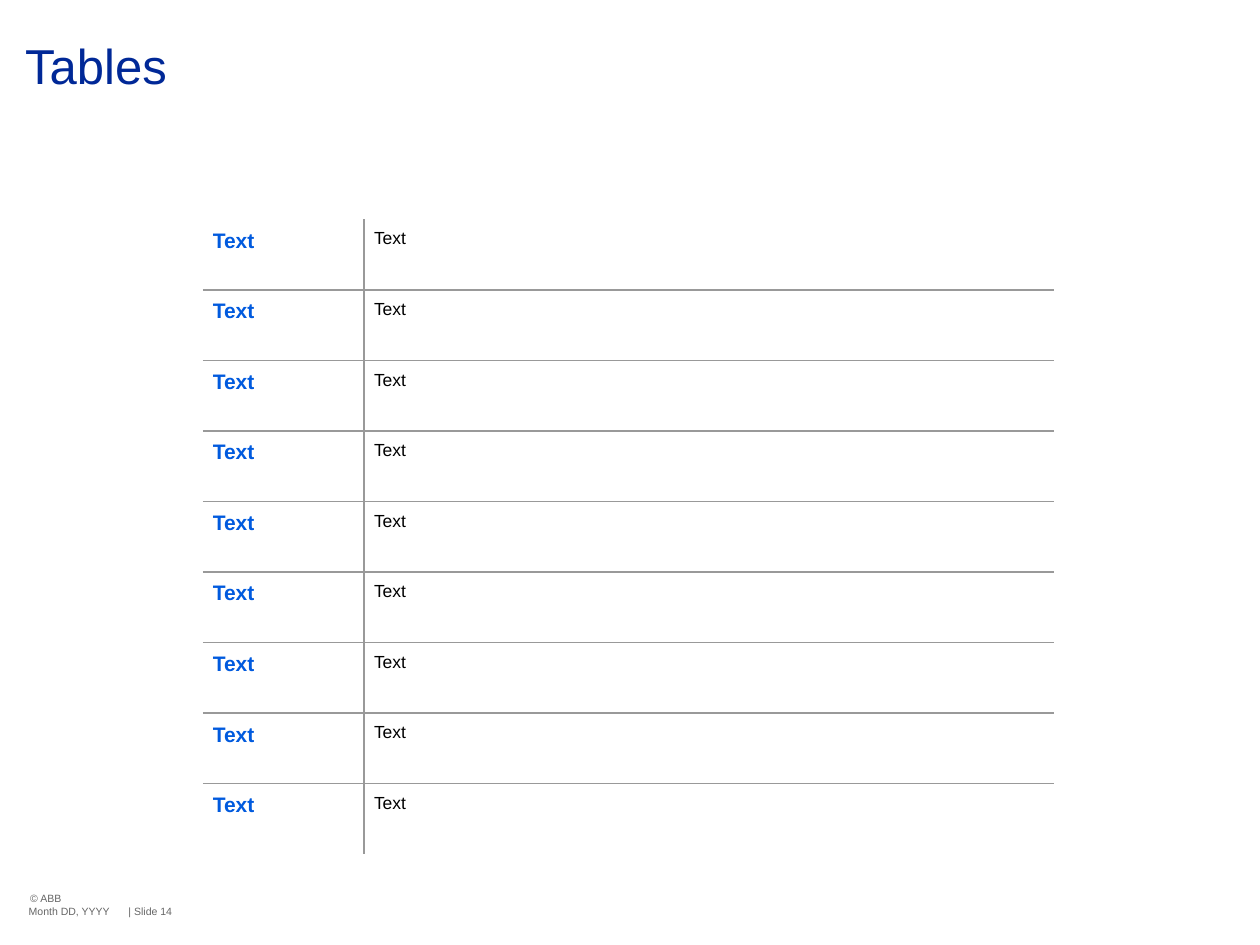
from dataclasses import dataclass

from lxml.etree import SubElement
from pptx import Presentation
from pptx.dml.color import RGBColor
from pptx.enum.text import MSO_ANCHOR as Anchor
from pptx.oxml.ns import qn
from pptx.util import Cm, Pt

FONT = "Arial"
NAVY, BLUE, BLACK, WHITE = "002897", "005ADE", "000000", "FFFFFF"
RULE_GRAY, FOOTER_GRAY = "999999", "666666"
NO_STYLE_NO_GRID = "{2D5ABB26-0587-4C30-8999-92F81FD0307C}"

ROW_COUNT = 9
TABLE_LEFT, TABLE_TOP, TABLE_HEIGHT = 4.09, 4.42, 12.8
CELL_MARGIN = Cm(0.2)


@dataclass
class Column:
    width: float
    size: float
    color: str
    bold: bool
    fill: str | None
    inner_side: str


@dataclass
class FooterItem:
    text: str
    left: float
    top: float
    width: float
    anchor: Anchor = Anchor.TOP


COLUMNS = [
    Column(3.25, 12, BLUE, True, None, "R"),
    Column(13.9, 10, BLACK, False, WHITE, "L"),
]
FOOTER = [
    FooterItem("© ABB", 0.61, 17.98, 3.1),
    FooterItem("| Slide 14", 2.59, 18.24, 1.35, Anchor.MIDDLE),
    FooterItem("Month DD, YYYY", 0.58, 18.24, 2.03),
]


def rgb(color: str) -> RGBColor:
    return RGBColor.from_string(color)


def write_text(frame, text: str, *, size: float, color: str, bold: bool = False,
               line_spacing: float | None = None) -> None:
    paragraph = frame.paragraphs[0]
    paragraph.line_spacing = line_spacing
    run = paragraph.add_run()
    run.text = text
    run.font.name = FONT
    run.font.size = Pt(size)
    run.font.bold = bold
    run.font.color.rgb = rgb(color)


def add_text_box(slide, text: str, left: float, top: float, width: float, height: float, *,
                 insets: tuple[float, float, float] = (0, 0, 0),
                 anchor: Anchor = Anchor.TOP, **text_format) -> None:
    """Insets are left, top and right; the bottom inset is always zero."""
    box = slide.shapes.add_textbox(Cm(left), Cm(top), Cm(width), Cm(height))
    frame = box.text_frame
    frame.word_wrap = True
    frame.vertical_anchor = anchor
    frame.margin_left, frame.margin_top, frame.margin_right = map(Cm, insets)
    frame.margin_bottom = 0
    write_text(frame, text, **text_format)


def add_borders(cell, sides: str) -> None:
    """Rule the given sides of a cell, named in the order L, R, T, B."""
    properties = cell._tc.get_or_add_tcPr()
    for side in sides:
        line = SubElement(properties, qn(f"a:ln{side}"), w=str(Pt(1)))
        fill = SubElement(line, qn("a:solidFill"))
        SubElement(fill, qn("a:srgbClr"), val=RULE_GRAY)


def fill_cell(cell, column: Column, row_index: int) -> None:
    cell.margin_left = cell.margin_right = CELL_MARGIN
    cell.margin_top = cell.margin_bottom = CELL_MARGIN
    write_text(cell.text_frame, "Text", size=column.size, color=column.color, bold=column.bold)
    top = "T" if row_index > 0 else ""
    bottom = "B" if row_index < ROW_COUNT - 1 else ""
    add_borders(cell, column.inner_side + top + bottom)
    if column.fill:
        cell.fill.solid()
        cell.fill.fore_color.rgb = rgb(column.fill)
    else:
        cell.fill.background()


def add_text_table(slide) -> None:
    width = sum(column.width for column in COLUMNS)
    shape = slide.shapes.add_table(ROW_COUNT, len(COLUMNS), Cm(TABLE_LEFT), Cm(TABLE_TOP),
                                   Cm(width), Cm(TABLE_HEIGHT))
    table = shape.table
    table.first_row = table.horz_banding = False
    table._tbl.tblPr.find(qn("a:tableStyleId")).text = NO_STYLE_NO_GRID
    for column_index, column in enumerate(COLUMNS):
        table.columns[column_index].width = Cm(column.width)
        for row_index in range(ROW_COUNT):
            fill_cell(table.cell(row_index, column_index), column, row_index)


def main() -> None:
    presentation = Presentation()
    presentation.slide_width, presentation.slide_height = Cm(25.4), Cm(19.05)
    slide = presentation.slides.add_slide(presentation.slide_layouts[6])
    add_text_box(slide, "Tables", 0, 0, 25.4, 4.42, insets=(0.51, 0.86, 0.61),
                 size=28, color=NAVY, line_spacing=0.9)
    add_text_table(slide)
    for item in FOOTER:
        add_text_box(slide, item.text, item.left, item.top, item.width, 0.25,
                     anchor=item.anchor, size=6, color=FOOTER_GRAY)
    presentation.save("out.pptx")


if __name__ == "__main__":
    main()
